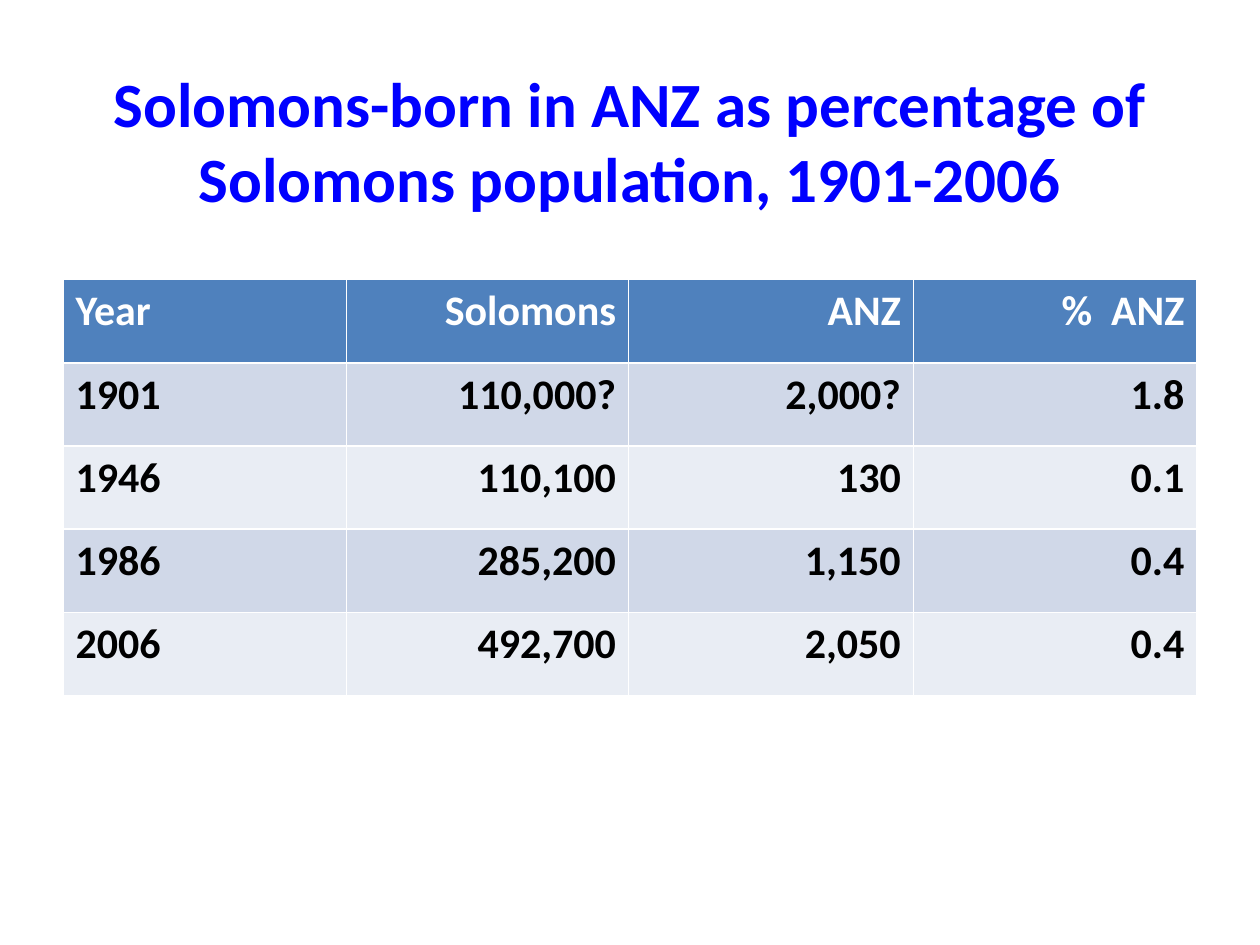
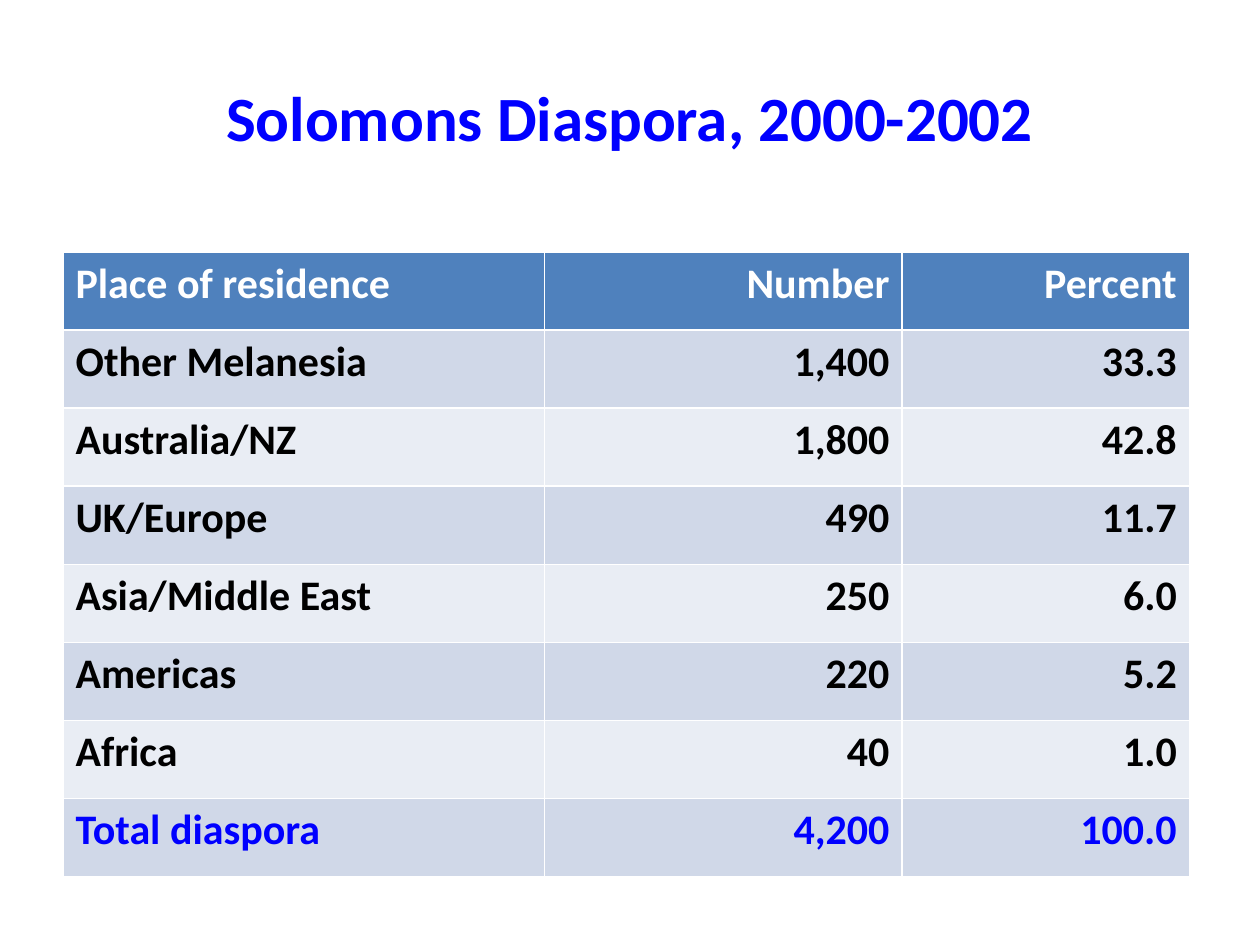
from pptx import Presentation
from pptx.dml.color import RGBColor
from pptx.enum.text import MSO_ANCHOR, MSO_AUTO_SIZE, PP_ALIGN
from pptx.util import Inches, Pt

LEFT, CENTER, RIGHT = PP_ALIGN.LEFT, PP_ALIGN.CENTER, PP_ALIGN.RIGHT
MIDDLE = MSO_ANCHOR.MIDDLE
NO_AUTOFIT = MSO_AUTO_SIZE.NONE

SLIDES = [
    {
        "title": "Solomons-born in ANZ as percentage of Solomons population, 1901-2006",
        "title_height": 1.62,
        "table_top": 2.22,
        "row_height": 0.66,
        "column_widths": [2.25, 2.24, 2.26, 2.25],
        "rows": [
            ("Year", "Solomons", "ANZ", "%  ANZ"),
            ("1901", "110,000?", "2,000?", "1.8"),
            ("1946", "110,100", "130", "0.1"),
            ("1986", "285,200", "1,150", "0.4"),
            ("2006", "492,700", "2,050", "0.4"),
        ],
        "has_total": False,
    },
    {
        "title": "Solomons Diaspora, 2000-2002",
        "title_height": 1.25,
        "table_top": 2,
        "row_height": 0.62,
        "column_widths": [3.82, 2.84, 2.28],
        "rows": [
            ("Place of residence", "Number", "Percent"),
            ("Other Melanesia", "1,400", "33.3"),
            ("Australia/NZ", "1,800", "42.8"),
            ("UK/Europe", "490", "11.7"),
            ("Asia/Middle East", "250", "6.0"),
            ("Americas", "220", "5.2"),
            ("Africa", "40", "1.0"),
            ("Total diaspora", "4,200", "100.0"),
        ],
        "has_total": True,
    },
]

COLORS = {
    "accent": "0000FF",
    "header": "4F81BD",
    "header_text": "FFFFFF",
    "body_text": "000000",
    "odd_band": "D0D8E8",
    "even_band": "E9EDF4",
}
FONT = "Calibri"
SLIDE_WIDTH, SLIDE_HEIGHT = 10, 7.5
MARGIN = SLIDE_WIDTH * 0.05
TITLE_TOP = SLIDE_HEIGHT * 0.04
TITLE_SIZE, TABLE_SIZE = 36, 24
TITLE_ONLY_LAYOUT = 5


def rgb(name):
    return RGBColor.from_string(COLORS[name])


def format_paragraph(paragraph, size, color, alignment):
    paragraph.alignment = alignment
    font = paragraph.font
    font.name = FONT
    font.size = Pt(size)
    font.bold = True
    font.color.rgb = rgb(color)


def add_title(slide, text, height):
    title = slide.shapes.title
    title.left, title.top = Inches(MARGIN), Inches(TITLE_TOP)
    title.width, title.height = Inches(SLIDE_WIDTH - 2 * MARGIN), Inches(height)
    frame = title.text_frame
    frame.text = text
    frame.auto_size = NO_AUTOFIT
    frame.vertical_anchor = MIDDLE
    format_paragraph(frame.paragraphs[0], TITLE_SIZE, "accent", CENTER)


def row_colors(row_index, is_total):
    if row_index == 0:
        return "header", "header_text"
    band = "odd_band" if row_index % 2 else "even_band"
    return band, "accent" if is_total else "body_text"


def add_data_table(slide, content):
    rows, widths = content["rows"], content["column_widths"]
    table = slide.shapes.add_table(
        len(rows), len(widths), Inches(MARGIN), Inches(content["table_top"]),
        Inches(sum(widths)), Inches(content["row_height"] * len(rows)),
    ).table
    for column, width in zip(table.columns, widths):
        column.width = Inches(width)
    for row_index, values in enumerate(rows):
        table.rows[row_index].height = Inches(content["row_height"])
        is_total = content["has_total"] and row_index == len(rows) - 1
        fill_color, text_color = row_colors(row_index, is_total)
        for column_index, value in enumerate(values):
            cell = table.cell(row_index, column_index)
            cell.text = value
            cell.fill.solid()
            cell.fill.fore_color.rgb = rgb(fill_color)
            alignment = RIGHT if column_index else LEFT
            format_paragraph(cell.text_frame.paragraphs[0], TABLE_SIZE, text_color, alignment)


def main():
    presentation = Presentation()
    presentation.slide_width = Inches(SLIDE_WIDTH)
    presentation.slide_height = Inches(SLIDE_HEIGHT)
    layout = presentation.slide_layouts[TITLE_ONLY_LAYOUT]
    for content in SLIDES:
        slide = presentation.slides.add_slide(layout)
        add_title(slide, content["title"], content["title_height"])
        add_data_table(slide, content)
    presentation.save("out.pptx")


if __name__ == "__main__":
    main()
